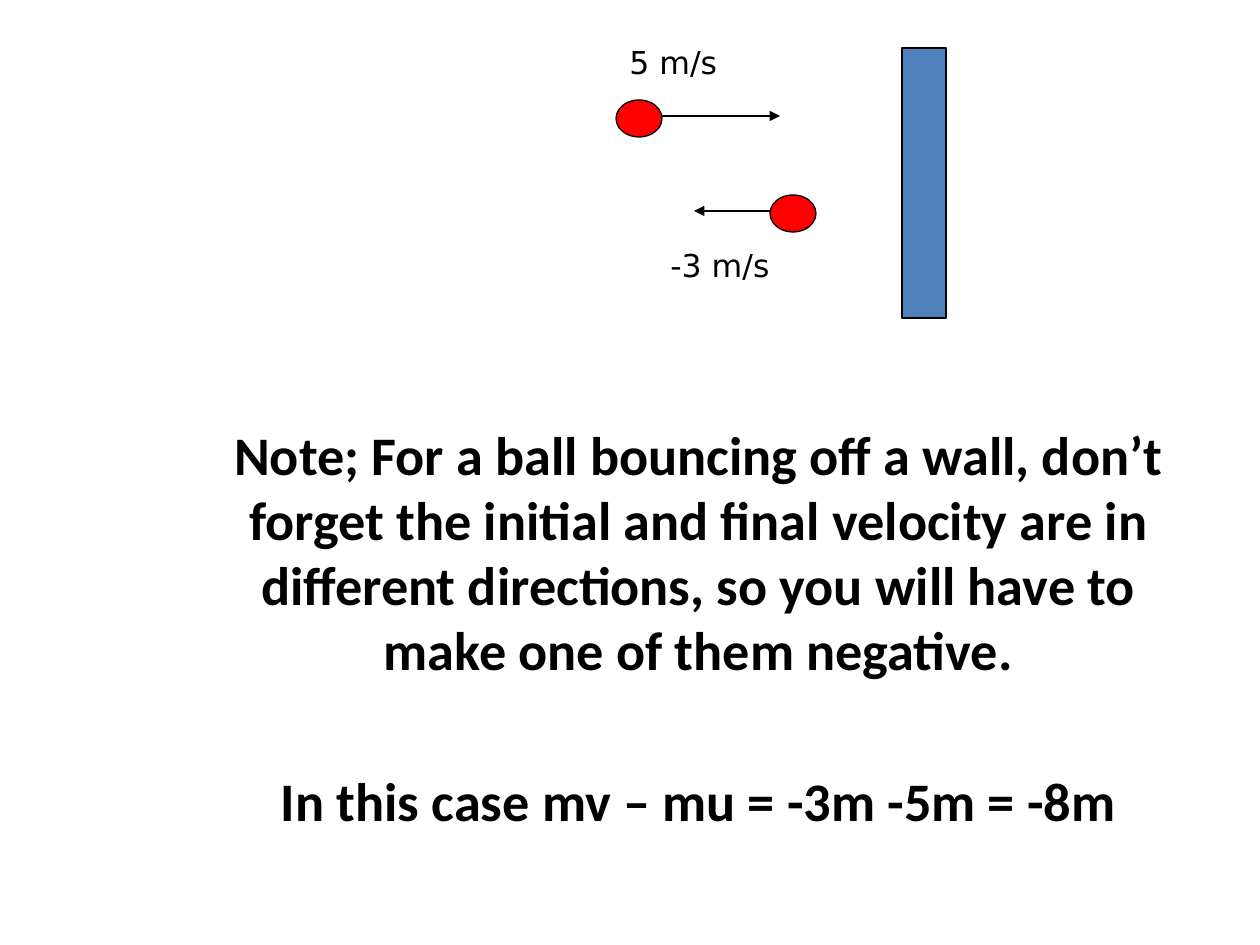
from pptx import Presentation
from pptx import util as u
from pptx.dml.color import RGBColor
from pptx.enum import shapes, text
from pptx.oxml.ns import qn
from lxml import etree

PX = 914400 / 126
BLACK = RGBColor(0x00, 0x00, 0x00)
RED = RGBColor(0xFF, 0x00, 0x00)
BLUE = RGBColor(0x4F, 0x81, 0xBD)


def px(*lengths):
    return [round(length * PX) for length in lengths]


def write(paragraph, words, font="Calibri", size=18, bold=False,
          align=text.PP_ALIGN.LEFT, before=0):
    paragraph.alignment = align
    paragraph.space_before = u.Pt(before)
    run = paragraph.add_run()
    run.text = words
    run.font.name, run.font.size, run.font.bold = font, u.Pt(size), bold
    run.font.color.rgb = BLACK


class Board:
    """The current slide and its drawing style."""
    line_width = u.Pt(0.75)
    label_font = "DejaVu Sans"

    def __init__(self, slide):
        self.slide = slide

    def outline(self, line):
        line.color.rgb, line.width = BLACK, self.line_width

    def solid(self, kind, box, fill):
        solid = self.slide.shapes.add_shape(kind, *px(*box))
        solid.shadow.inherit = False
        solid.fill.solid()
        solid.fill.fore_color.rgb = fill
        self.outline(solid.line)
        return solid

    def arrow(self, start, end, y):
        arrow = self.slide.shapes.add_connector(
            shapes.MSO_CONNECTOR.STRAIGHT, *px(start, y, end, y))
        self.outline(arrow.line)
        etree.SubElement(arrow.line._get_or_add_ln(), qn("a:tailEnd"), type="triangle")
        etree.SubElement(arrow.element.spPr, qn("a:effectLst"))
        return arrow

    def moving_ball(self, left, top, reach):
        """A ball with its velocity arrow; a negative reach points left."""
        width, height = 46, 37
        ball = self.solid(shapes.MSO_SHAPE.OVAL, (left, top, width, height), RED)
        start = left + width if reach > 0 else left
        arrow = self.arrow(start, start + reach, top + 16)
        self.slide.shapes.add_group_shape([ball, arrow])

    def label(self, words, left, top):
        frame = self.slide.shapes.add_textbox(*px(left, top, 167, 50)).text_frame
        frame.word_wrap = True
        write(frame.paragraphs[0], words, font=self.label_font)

    def note(self, box, paragraphs, gap):
        note = self.slide.placeholders[1]
        note.left, note.top, note.width, note.height = px(*box)
        frame = note.text_frame
        frame.vertical_anchor = text.MSO_ANCHOR.TOP
        for i, words in enumerate(paragraphs):
            paragraph = frame.add_paragraph() if i else frame.paragraphs[0]
            write(paragraph, words, size=31, bold=True,
                  align=text.PP_ALIGN.CENTER, before=gap if i else 0)


def main():
    deck = Presentation()
    deck.slide_width, deck.slide_height = u.Inches(10), u.Inches(7.5)
    slide = deck.slides.add_slide(deck.slide_layouts[0])
    title = slide.shapes.title.element
    title.getparent().remove(title)
    board = Board(slide)

    # Explanation
    board.note((199, 415, 998, 423), [
        "Note; For a ball bouncing off a wall, don’t forget the initial and "
        "final velocity are in different directions, so you will have to make "
        "one of them negative.",
        "In this case mv – mu = -3m -5m = -8m",
    ], gap=49)

    # Wall, with the ball before and after the bounce
    board.solid(shapes.MSO_SHAPE.RECTANGLE, (902, 48, 44, 270), BLUE)
    board.moving_ball(616, 100, reach=118)
    board.moving_ball(770, 195, reach=-76)

    # Velocities
    board.label("5 m/s", 617, 37)
    board.label("-3 m/s", 658, 240)

    deck.save("out.pptx")


if __name__ == "__main__":
    main()
